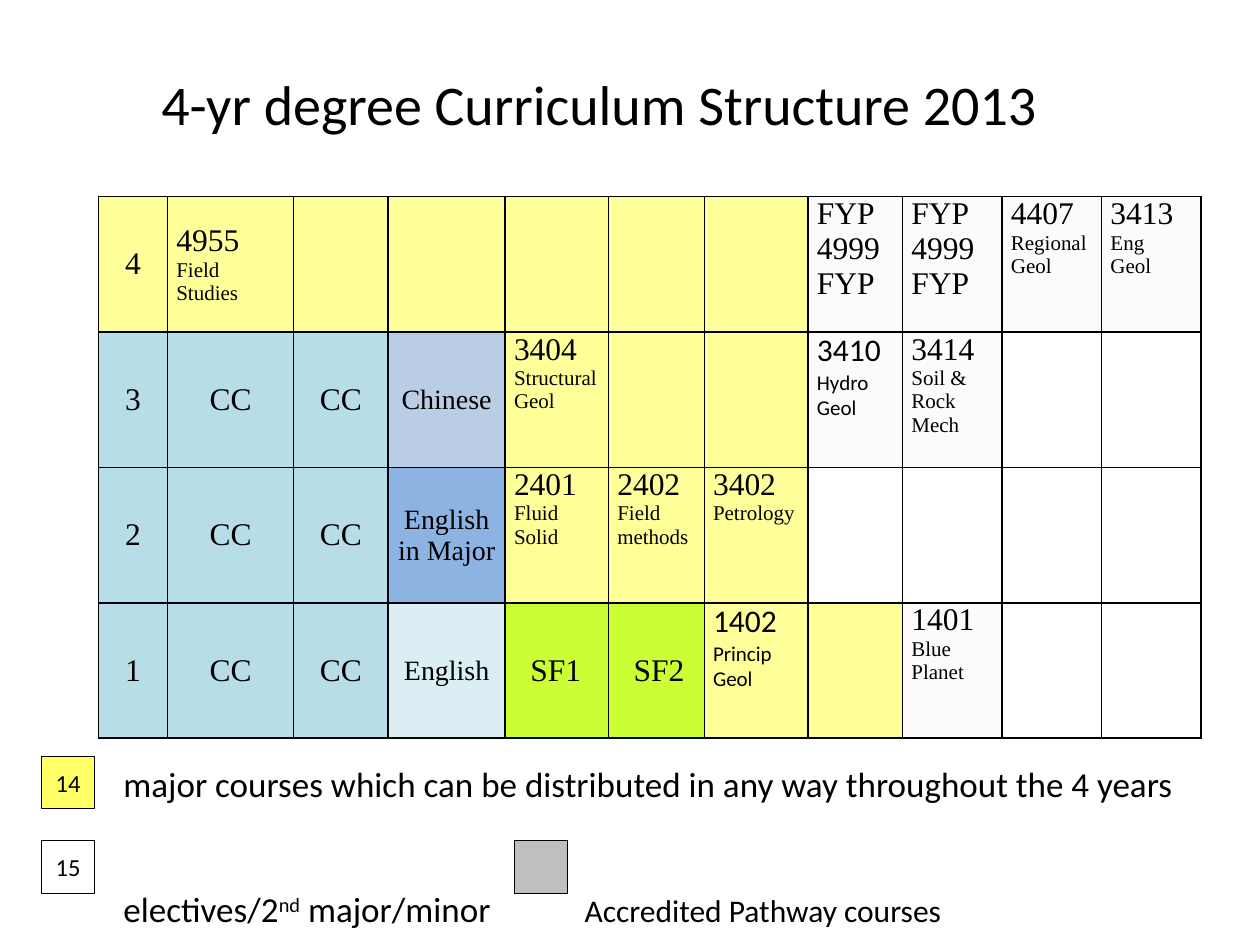
from lxml.etree import SubElement
from pptx import Presentation
from pptx.dml.color import RGBColor
from pptx.enum.shapes import MSO_SHAPE
from pptx.enum.text import MSO_ANCHOR, PP_ALIGN
from pptx.oxml import parse_xml
from pptx.oxml.ns import qn
from pptx.util import Inches, Pt

HUES = {
    "ink": "000000", "Y": "FFFF99", "B": "B7DEE8", "C": "B9CDE5",
    "M": "8DB3E2", "E": "DAEEF3", "S": "CCFF33", "P": "FCFBF9",
    "W": "FFFFFF", "major": "FFFF66", "path": "BFBFBF",
}
COLS = [5.5, 10, 7.5, 9.3, 8.2, 7.6, 8.25, 7.5, 7.9, 7.9, 7.9]
FILLS = ["YYYYYYYPPPP", "BBBCYYYPPWW", "BBBMYYYWWWW", "BBBESSYYPWW"]
FYP = "FYP\n4999\nFYP"
PLAN = [
    ["4", "4955\nField Studies", "", "", "", "", "", FYP, FYP,
     "4407\nRegional Geol", "3413\nEng\nGeol"],
    ["3", "CC", "CC", "Chinese", "3404\nStructural Geol", "", "",
     "3410\nHydro\nGeol", "3414\nSoil & Rock\nMech", "", ""],
    ["2", "CC", "CC", "English in Major", "2401\nFluid\nSolid",
     "2402\nField methods", "3402\nPetrology", "", "", "", ""],
    ["1", "CC", "CC", "English", "SF1", "SF2", "1402\nPrincip\nGeol", "",
     "1401\nBlue\nPlanet", "", ""],
]
SANS = ("3410", "1402")


class Deck:
    """Draws styled parts on a slide of 100 columns by 75 rows."""

    def __init__(self):
        self.show = Presentation()
        self.show.slide_width, self.show.slide_height = Inches(10), Inches(7.5)
        self.slide = self.show.slides.add_slide(self.show.slide_layouts[6])
        self.font = "Calibri"
        self.serif = "Times New Roman"

    def unit(self, *counts):
        return [int(self.show.slide_width * n / 100) for n in counts]

    def hue(self, name):
        return RGBColor.from_string(HUES[name])

    def paint(self, part, name):
        part.fill.solid()
        part.fill.fore_color.rgb = self.hue(name)

    def style(self, run, size, face=None):
        run.font.size = Pt(size)
        run.font.name = face or self.font
        run.font.color.rgb = self.hue("ink")

    def text(self, box, lines, size, inset):
        frame = self.slide.shapes.add_textbox(*self.unit(*box)).text_frame
        frame.word_wrap = True
        frame.margin_left = self.unit(inset)[0]
        frame.text = "\n".join(lines)
        for para in frame.paragraphs:
            for run in para.runs:
                self.style(run, size)
        return frame

    def key(self, left, top, name, label=""):
        box = self.slide.shapes.add_shape(
            MSO_SHAPE.RECTANGLE, *self.unit(left, top, 4.2, 4.2))
        box.shadow.inherit = False
        self.paint(box, name)
        box.line.color.rgb = self.hue("ink")
        box.line.width = Pt(0.5)
        if label:
            frame = box.text_frame
            frame.margin_left = frame.margin_right = 0
            frame.vertical_anchor = MSO_ANCHOR.MIDDLE
            frame.text = label
            frame.paragraphs[0].alignment = PP_ALIGN.CENTER
            self.style(frame.paragraphs[0].runs[0], 14)

    def edge(self, cell):
        props = cell._tc.get_or_add_tcPr()
        for spot, side in enumerate(("lnL", "lnR", "lnT", "lnB")):
            props.insert(spot, parse_xml(
                f'<a:{side} xmlns:a="http://schemas.openxmlformats.org/drawingml/2006/main"'
                f' w="{Pt(1)}"><a:solidFill><a:srgbClr val="{HUES["ink"]}"/>'
                f'</a:solidFill></a:{side}>'))

    def cell(self, cell, words, name, mid, inset):
        cell.margin_left, cell.margin_right = self.unit(inset, 0.7)
        cell.margin_top = cell.margin_bottom = 0
        cell.vertical_anchor = MSO_ANCHOR.MIDDLE if mid else MSO_ANCHOR.TOP
        self.paint(cell, name)
        self.edge(cell)
        cell.text_frame.text = words
        face = self.font if words.startswith(SANS) else self.serif
        wide = name in "BCME" or words == "4"
        for para in cell.text_frame.paragraphs:
            para.alignment = PP_ALIGN.CENTER if wide else PP_ALIGN.LEFT
            for run in para.runs:
                big = run.text == run.text.upper()
                self.style(run, 18 if big else 16 if wide else 12, face)

    def table(self, left, top, cols, tall, plan, fills):
        grid = self.slide.shapes.add_table(
            len(plan), len(cols),
            *self.unit(left, top, sum(cols), tall * len(plan))).table
        grid.first_row = grid.horz_banding = False
        for col, wide in zip(grid.columns, self.unit(*cols)):
            col.width = wide
        for row, items, names in zip(grid.rows, plan, fills):
            row.height = self.unit(tall)[0]
            for cell, words, name in zip(row.cells, items, names):
                mid = name in "BCMES" or words == "4" or words.startswith("4955")
                self.cell(cell, words, name, mid, 2 if name == "S" else 0.7)

    def notes(self, box):
        frame = self.text(box, [
            "major courses which can be distributed in any way throughout the 4 years",
            "electives/2"], 20, 2.3)
        para = frame.paragraphs[1]
        para.space_before = Pt(47.6)
        tabs = SubElement(para._p.get_or_add_pPr(), qn("a:tabLst"))
        SubElement(tabs, qn("a:tab"), pos=str(self.unit(36.6)[0]), algn="l")
        for words, size in (("nd", 20), (" major/minor\t", 20),
                            ("Accredited Pathway courses", 18)):
            run = para.add_run()
            run.text = words
            self.style(run, size)
        para.runs[1].font._element.set("baseline", "30000")


def main():
    deck = Deck()
    deck.table(7.8, 15.6, COLS, 10.75, PLAN, FILLS)
    deck.text((7.8, 5, 89.8, 6.4),
              ["4-yr degree Curriculum Structure 2013"], 32, 5)
    deck.notes((7.5, 60, 87.5, 11.1))
    deck.key(3.3, 60, "major", "14")
    deck.key(3.3, 66.7, "W", "15")
    deck.key(40.8, 66.7, "path")
    deck.show.save("out.pptx")


if __name__ == "__main__":
    main()
